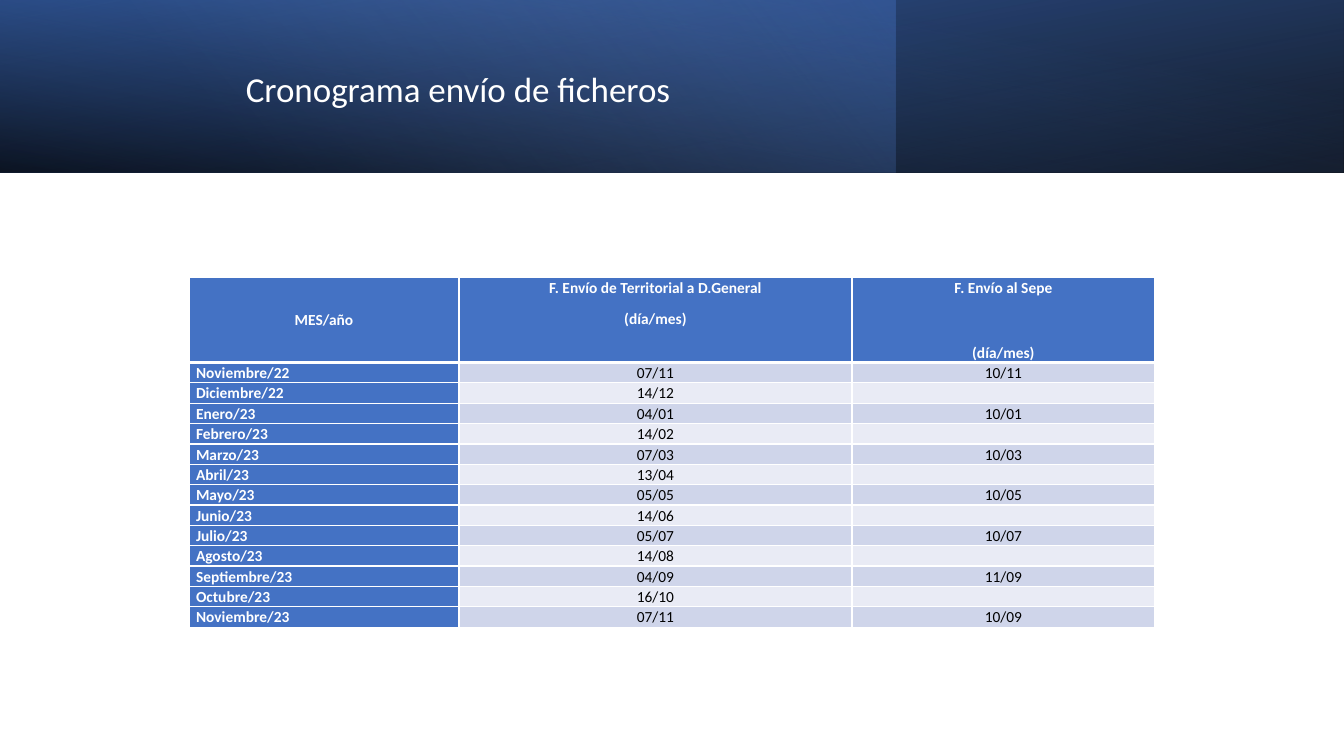
from dataclasses import dataclass

from lxml.etree import SubElement
from pptx import Presentation
from pptx.dml.color import RGBColor
from pptx.enum.shapes import MSO_SHAPE
from pptx.enum.text import MSO_ANCHOR, MSO_AUTO_SIZE, PP_ALIGN
from pptx.oxml.ns import qn
from pptx.util import Emu, Pt

WHITE = RGBColor(0xFF, 0xFF, 0xFF)
BLACK = RGBColor(0, 0, 0)
BLUE = RGBColor(0x44, 0x72, 0xC4)
DEEP_BLUE = RGBColor(0x2F, 0x55, 0x97)
SOFT_BLUE = RGBColor(0x8F, 0xAA, 0xDC)
BAND_DARK = RGBColor(0xCF, 0xD5, 0xEA)
BAND_LIGHT = RGBColor(0xE9, 0xEB, 0xF5)

FONT = "Calibri"
PX_PER_INCH = 100.8
SLIDE_W, SLIDE_H, BAND_H = 1344, 756, 173
COLUMNS = (270, 393, 303)
HEAD_H, ROW_H = 84, 20


def px(n: int) -> Emu:
    return Emu(round(n * 914400 / PX_PER_INCH))


@dataclass
class Stop:
    position: float
    color: RGBColor
    alpha: int = 100


@dataclass
class Band:
    width: int
    clockwise: int
    stops: tuple[Stop, Stop]
    flip: bool = False
    rotation: int = 0


@dataclass
class Heading:
    lines: tuple[str, ...]
    gap: int = 0
    anchor: MSO_ANCHOR = MSO_ANCHOR.TOP


@dataclass
class Month:
    name: str
    to_general: str
    to_sepe: str = ""


BANDS = (
    Band(SLIDE_W, 100, (Stop(0, BLACK, 96), Stop(1, DEEP_BLUE)), True, 180),
    Band(896, 140, (Stop(0, BLUE, 41), Stop(0.74, SOFT_BLUE, 0))),
    Band(SLIDE_W, 260, (Stop(0, BLACK, 63), Stop(0.78, BLUE, 15)), True),
)
HEADINGS = (
    Heading(("MES/año",), anchor=MSO_ANCHOR.MIDDLE),
    Heading(("F. Envío de Territorial a D.General", "(día/mes)")),
    Heading(("F. Envío al Sepe", "(día/mes)"), gap=24),
)
MONTHS = (
    Month("Noviembre/22", "07/11", "10/11"),
    Month("Diciembre/22", "14/12"),
    Month("Enero/23", "04/01", "10/01"),
    Month("Febrero/23", "14/02"),
    Month("Marzo/23", "07/03", "10/03"),
    Month("Abril/23", "13/04"),
    Month("Mayo/23", "05/05", "10/05"),
    Month("Junio/23", "14/06"),
    Month("Julio/23", "05/07", "10/07"),
    Month("Agosto/23", "14/08"),
    Month("Septiembre/23", "04/09", "11/09"),
    Month("Octubre/23", "16/10"),
    Month("Noviembre/23", "07/11", "10/09"),
)


def draw_band(s, band: Band) -> None:
    sp = s.shapes.add_shape(MSO_SHAPE.RECTANGLE, 0, 0, px(band.width), px(BAND_H))
    sp.shadow.inherit = False
    sp.line.fill.background()
    sp.rotation = band.rotation
    if band.flip:
        sp._element.spPr.find(qn("a:xfrm")).set("flipH", "1")
    sp.fill.gradient()
    sp.fill.gradient_angle = 360 - band.clockwise
    for target, stop in zip(sp.fill.gradient_stops, band.stops):
        target.position = stop.position
        target.color.rgb = stop.color
    colors = sp._element.spPr.findall(".//" + qn("a:srgbClr"))
    for color, stop in zip(colors, band.stops):
        if stop.alpha < 100:
            SubElement(color, qn("a:alpha")).set("val", str(stop.alpha * 1000))


def draw_title(s, text: str) -> None:
    sp = s.shapes.title
    sp.left, sp.top, sp.width, sp.height = px(28), px(27), px(860), px(128)
    s.shapes._spTree.append(sp._element)  # in front of the bands
    tf = sp.text_frame
    tf.text = text
    tf.auto_size = MSO_AUTO_SIZE.NONE
    tf.word_wrap = True
    tf.vertical_anchor = MSO_ANCHOR.MIDDLE
    p = tf.paragraphs[0]
    p.alignment = PP_ALIGN.CENTER
    p.line_spacing = 0.9
    font = p.runs[0].font
    font.name, font.size, font.color.rgb = FONT, Pt(25), WHITE


def fill_cell(cell, text: str, fill: RGBColor, color: RGBColor, bold: bool,
              align: PP_ALIGN, bottom: int = 1) -> None:
    # Borders come before the fill in the cell properties
    tc_pr = cell._tc.get_or_add_tcPr()
    for side, width in (("L", 1), ("R", 1), ("T", 1), ("B", bottom)):
        ln = SubElement(tc_pr, qn(f"a:ln{side}"), w=str(Pt(width)))
        solid = SubElement(ln, qn("a:solidFill"))
        SubElement(solid, qn("a:srgbClr"), val=str(WHITE))
    cell.fill.solid()
    cell.fill.fore_color.rgb = fill
    cell.margin_left = cell.margin_right = px(7)
    cell.margin_top = cell.margin_bottom = 0
    cell.text_frame.text = text
    for p in cell.text_frame.paragraphs:
        p.alignment = align
        p.line_spacing = 1.07
        p.space_after = Pt(8)
        for r in p.runs:
            r.font.name, r.font.size, r.font.bold = FONT, Pt(11), bold
            r.font.color.rgb = color
        if not p.runs:
            SubElement(p._p, qn("a:endParaRPr"), sz="1100")


def draw_schedule(s) -> None:
    frame = s.shapes.add_table(len(MONTHS) + 1, len(COLUMNS), px(189), px(277),
                               px(sum(COLUMNS)), px(HEAD_H + ROW_H * len(MONTHS)))
    table = frame.table
    table.first_col = True
    for column, width in zip(table.columns, COLUMNS):
        column.width = px(width)
    for i, row in enumerate(table.rows):
        row.height = px(ROW_H if i else HEAD_H)

    # Header row
    for col, heading in enumerate(HEADINGS):
        cell = table.cell(0, col)
        fill_cell(cell, "\n".join(heading.lines), BLUE, WHITE, True,
                  PP_ALIGN.CENTER, bottom=3)
        cell.vertical_anchor = heading.anchor
        if heading.gap:
            cell.text_frame.paragraphs[1].space_before = Pt(heading.gap)

    # One row per month, in alternating bands
    for i, month in enumerate(MONTHS, start=1):
        band = BAND_DARK if i % 2 else BAND_LIGHT
        fill_cell(table.cell(i, 0), month.name, BLUE, WHITE, True, PP_ALIGN.LEFT)
        for col, day in enumerate((month.to_general, month.to_sepe), start=1):
            fill_cell(table.cell(i, col), day, band, BLACK, False, PP_ALIGN.CENTER)


def main() -> None:
    prs = Presentation()
    prs.slide_width, prs.slide_height = px(SLIDE_W), px(SLIDE_H)
    s = prs.slides.add_slide(prs.slide_layouts[5])
    for band in BANDS:
        draw_band(s, band)
    draw_title(s, "Cronograma envío de ficheros")
    draw_schedule(s)
    prs.save("out.pptx")


if __name__ == "__main__":
    main()
